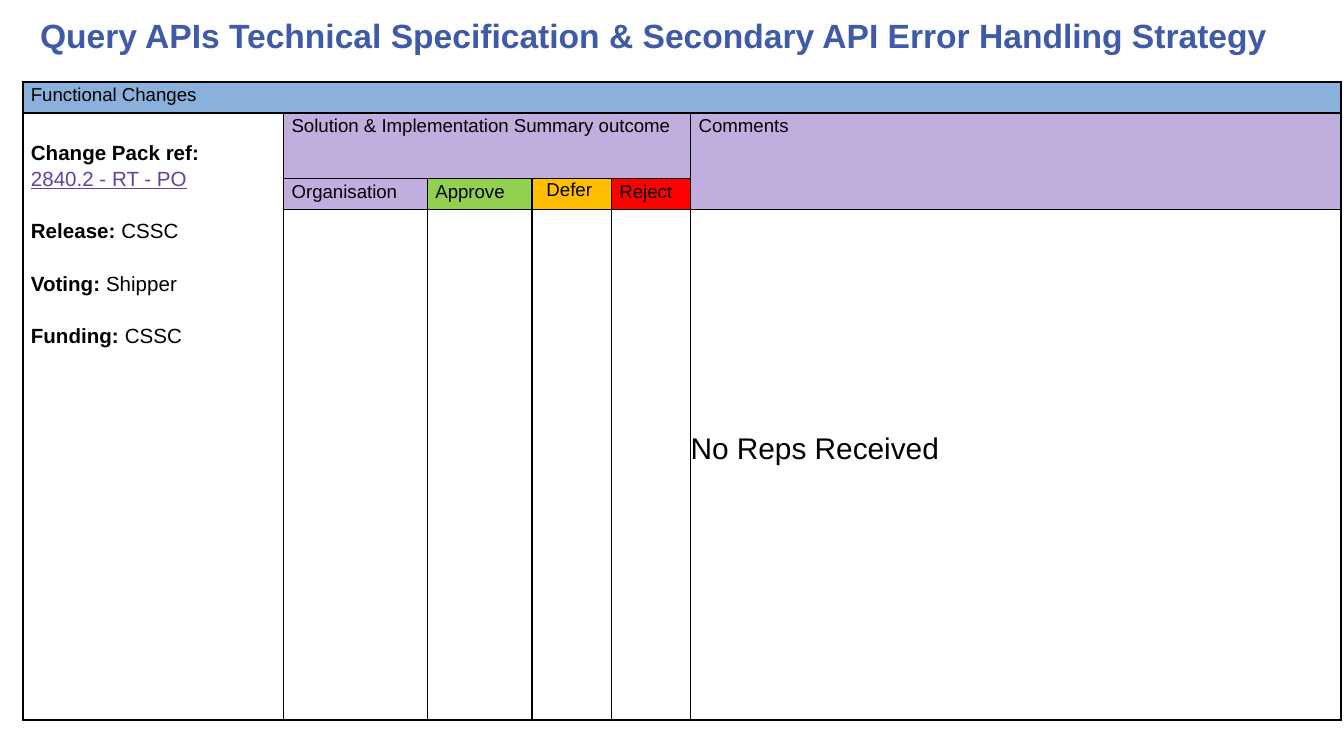
from pptx import Presentation
from pptx.dml.color import RGBColor
from pptx.enum.text import MSO_ANCHOR as Anchor, MSO_AUTO_SIZE as AutoSize, PP_ALIGN as Align
from pptx.oxml.ns import qn
from pptx.util import Inches, Pt
from lxml.etree import SubElement

FONT = "Arial"
BLACK, BLUE, LINK = "000000", "3E5AA8", "6440A3"
SKY, LILAC, GREEN, AMBER, RED = "89B1DC", "C0AEDF", "92D050", "FFBF00", "FF0000"
COLUMNS = [1.94, 1.07, 0.78, 0.59, 0.59, 4.84]
ROWS = [0.23, 0.49, 0.23, 3.8]
PADDED = (0.06, 0, 0.06, 0)
TIGHT = (0.01, 0.01, 0.01, 0)


def color(hex_string):
    return RGBColor.from_string(hex_string)


def add_span(para, text, size=10, ink=BLACK, bold=False, underline=False):
    span = para.add_run()
    span.text = text
    font = span.font
    font.name, font.size, font.bold, font.underline = FONT, Pt(size), bold, underline
    font.color.rgb = color(ink)


def set_margins(cell, margins):
    cell.margin_left, cell.margin_top, cell.margin_right, cell.margin_bottom = map(Inches, margins)


def add_borders(cell):
    properties = cell._tc.get_or_add_tcPr()
    for side in ("a:lnL", "a:lnR", "a:lnT", "a:lnB"):
        line = SubElement(properties, qn(side), w=str(Pt(1)))
        fill = SubElement(line, qn("a:solidFill"))
        SubElement(fill, qn("a:srgbClr"), val=BLACK)


def add_title(page, text):
    box = page.shapes.add_textbox(Inches(0.2), Inches(0.06), Inches(9.8), Inches(0.4))
    frame = box.text_frame
    frame.word_wrap = True
    frame.auto_size = AutoSize.SHAPE_TO_FIT_TEXT
    add_span(frame.paragraphs[0], text, 18, BLUE, bold=True)


def add_grid(page):
    frame = page.shapes.add_table(len(ROWS), len(COLUMNS), Inches(0.17), Inches(0.61),
                                  Inches(sum(COLUMNS)), Inches(sum(ROWS)))
    table = frame.table
    table.first_row = table.horz_banding = False
    for column, width in zip(table.columns, COLUMNS):
        column.width = Inches(width)
    for row, height in zip(table.rows, ROWS):
        row.height = Inches(height)
    for cell in table.iter_cells():
        add_borders(cell)
        cell.fill.background()
    # Merged areas: first and last cell
    for first, last in [((0, 0), (0, 5)), ((1, 0), (3, 0)), ((1, 1), (1, 4)), ((1, 5), (2, 5))]:
        table.cell(*first).merge(table.cell(*last))
    return table


def fill_heading(cell, text, fill, margins=PADDED, align=Align.LEFT, spacing=1.15):
    set_margins(cell, margins)
    cell.fill.solid()
    cell.fill.fore_color.rgb = color(fill)
    para = cell.text_frame.paragraphs[0]
    para.alignment = align
    para.line_spacing = spacing
    add_span(para, text)


def fill_details(cell):
    set_margins(cell, (0.06, 0.19, 0.06, 0))
    frame = cell.text_frame
    para = frame.paragraphs[0]
    para.line_spacing = 1.15
    add_span(para, "Change Pack ref:\u00a0", 11, bold=True)
    para = frame.add_paragraph()
    para.line_spacing = 1.15
    add_span(para, "2840.2 - RT - PO", 11, LINK, underline=True)
    for label, value in [("Release: ", "CSSC"), ("Voting: ", "Shipper"), ("Funding: ", "CSSC")]:
        para = frame.add_paragraph()
        para.line_spacing = 1.15
        para.space_before = Pt(14)
        add_span(para, label, 11, bold=True)
        add_span(para, value, 11)


def fill_comment(cell, text):
    set_margins(cell, (0, 0.01, 0.01, 0.25))
    cell.vertical_anchor = Anchor.MIDDLE
    add_span(cell.text_frame.paragraphs[0], text, 16)


def main():
    deck = Presentation()
    # Widescreen 16:9
    deck.slide_width = Inches(10)
    deck.slide_height = deck.slide_width * 9 // 16
    page = deck.slides.add_slide(deck.slide_layouts[6])

    add_title(page, "Query APIs Technical Specification & Secondary API Error Handling Strategy")
    table = add_grid(page)

    # Headings
    fill_heading(table.cell(0, 0), "Functional Changes", SKY)
    fill_heading(table.cell(1, 1), "Solution & Implementation Summary outcome", LILAC)
    fill_heading(table.cell(1, 5), "Comments", LILAC)
    fill_heading(table.cell(2, 1), "Organisation", LILAC)
    fill_heading(table.cell(2, 2), "Approve", GREEN)
    fill_heading(table.cell(2, 3), "Defer ", AMBER, TIGHT, Align.CENTER, 1.0)
    fill_heading(table.cell(2, 4), "Reject", RED)

    # Content
    fill_details(table.cell(1, 0))
    fill_comment(table.cell(3, 5), "No Reps Received")

    deck.save("out.pptx")


if __name__ == "__main__":
    main()
